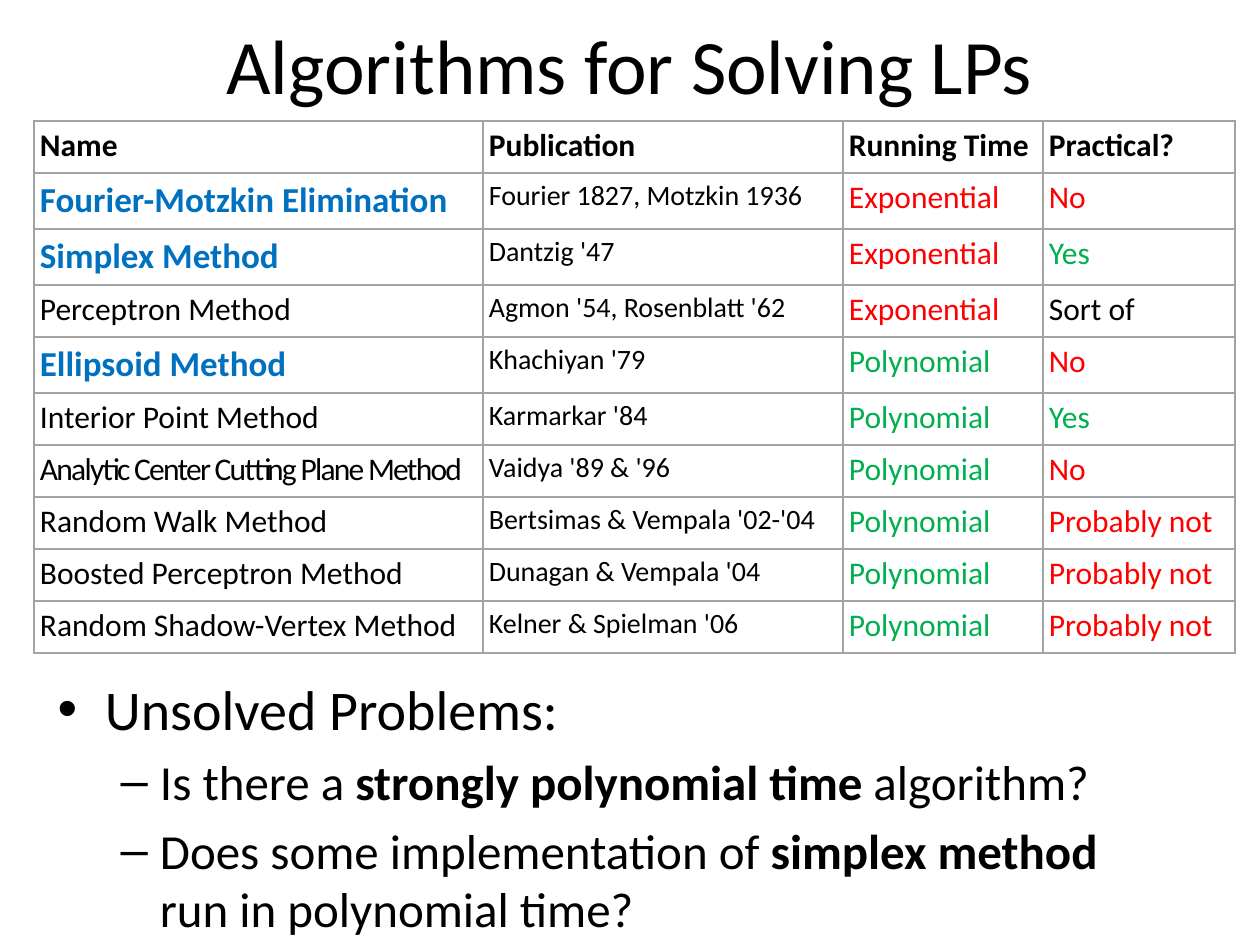
import pptx
import pptx.dml.color
import pptx.enum.text
import pptx.oxml
import pptx.oxml.ns
import pptx.util

# Content
COLORS = {"black": "000000", "blue": "0070C0", "red": "FF0000",
          "green": "00B050", "grid": "A3A3A3"}
FONT = "Calibri"
TITLE = "Algorithms for Solving LPs"
HEADER = ("Name", "Publication", "Running Time", "Practical?")
METHODS = [
    ("Fourier-Motzkin Elimination", "Fourier 1827, Motzkin 1936", "Exponential", "No"),
    ("Simplex Method", "Dantzig '47", "Exponential", "Yes"),
    ("Perceptron Method", "Agmon '54, Rosenblatt '62", "Exponential", "Sort of"),
    ("Ellipsoid Method", "Khachiyan '79", "Polynomial", "No"),
    ("Interior Point Method", "Karmarkar '84", "Polynomial", "Yes"),
    ("Analytic Center Cutting Plane Method", "Vaidya '89 & '96", "Polynomial", "No"),
    ("Random Walk Method", "Bertsimas & Vempala '02-'04", "Polynomial", "Probably not"),
    ("Boosted Perceptron Method", "Dunagan & Vempala '04", "Polynomial", "Probably not"),
    ("Random Shadow-Vertex Method", "Kelner & Spielman '06", "Polynomial", "Probably not"),
]
HIGHLIGHTED = {"Fourier-Motzkin Elimination", "Simplex Method", "Ellipsoid Method"}
TIGHT = {"Analytic Center Cutting Plane Method"}
VERDICTS = {"Exponential": "red", "Polynomial": "green", "No": "red",
            "Probably not": "red", "Yes": "green"}
# (level, size, [(text, bold)])
PROBLEMS = [
    (0, 32, [("Unsolved Problems:", False)]),
    (1, 28, [("Is there a ", False), ("strongly polynomial time", True),
             (" algorithm?", False)]),
    (1, 28, [("Does some implementation of ", False), ("simplex method ", True),
             ("run in polynomial time?", False)]),
]

# Geometry in px
SLIDE = (1260, 945)
TITLE_BOX = (63, 0, 1134, 127)
BODY_BOX = (45, 668, 1134, 260)
TABLE_LEFT, TABLE_TOP = 34, 121
COLUMN_WIDTHS = (449, 360, 200, 192)
ROW_HEIGHT, HIGHLIGHTED_HEIGHT = 52, 56
CELL_MARGIN = 6


def px(length):
    return pptx.util.Emu(round(length * 914400 / 126))


def place(box, bounds):
    box.left, box.top, box.width, box.height = map(px, bounds)
    box.text_frame.auto_size = pptx.enum.text.MSO_AUTO_SIZE.NONE
    box.text_frame.word_wrap = True


def add_span(para, text, size, color="black", bold=False):
    span = para.add_run()
    span.text = text
    span.font.name = FONT
    span.font.size = pptx.util.Pt(size)
    span.font.bold = bold
    span.font.color.rgb = pptx.dml.color.RGBColor.from_string(COLORS[color])
    return span


def add_borders(cell):
    properties = cell._tc.get_or_add_tcPr()
    for index, side in enumerate(("lnL", "lnR", "lnT", "lnB")):
        properties.insert(index, pptx.oxml.parse_xml(
            f'<a:{side} {pptx.oxml.ns.nsdecls("a")} w="12700"><a:solidFill>'
            f'<a:srgbClr val="{COLORS["grid"]}"/></a:solidFill></a:{side}>'))


def cell_style(row, column, text):
    """Size, colour and weight of one table cell."""
    if row == 0:
        return 18, "black", True
    if text in HIGHLIGHTED:
        return 20, "blue", True
    return 16 if column == 1 else 18, VERDICTS.get(text, "black"), False


def add_methods_table(slide):
    rows = [HEADER] + METHODS
    heights = [HIGHLIGHTED_HEIGHT if row[0] in HIGHLIGHTED else ROW_HEIGHT
               for row in rows]
    table = slide.shapes.add_table(
        len(rows), len(HEADER), px(TABLE_LEFT), px(TABLE_TOP),
        px(sum(COLUMN_WIDTHS)), px(sum(heights))).table
    table.first_row = table.horz_banding = False
    for column, width in zip(table.columns, COLUMN_WIDTHS):
        column.width = px(width)
    for r, (texts, height) in enumerate(zip(rows, heights)):
        table.rows[r].height = px(height)
        for c, text in enumerate(texts):
            cell = table.cell(r, c)
            cell.fill.background()
            cell.margin_left = cell.margin_right = px(CELL_MARGIN)
            cell.margin_top = cell.margin_bottom = px(CELL_MARGIN)
            add_borders(cell)
            span = add_span(cell.text_frame.paragraphs[0], text,
                            *cell_style(r, c, text))
            if text in TIGHT:
                span._r.get_or_add_rPr().set("spc", "-100")


def main():
    deck = pptx.Presentation()
    deck.slide_width, deck.slide_height = map(px, SLIDE)
    slide = deck.slides.add_slide(deck.slide_layouts[1])

    # Title
    title = slide.shapes.title
    place(title, TITLE_BOX)
    add_span(title.text_frame.paragraphs[0], TITLE, 44)

    # Unsolved problems
    body = slide.placeholders[1]
    place(body, BODY_BOX)
    for index, (level, size, spans) in enumerate(PROBLEMS):
        frame = body.text_frame
        para = frame.add_paragraph() if index else frame.paragraphs[0]
        para.level = level
        for text, bold in spans:
            add_span(para, text, size, bold=bold)

    # Table of methods
    add_methods_table(slide)

    deck.save("out.pptx")


if __name__ == "__main__":
    main()
